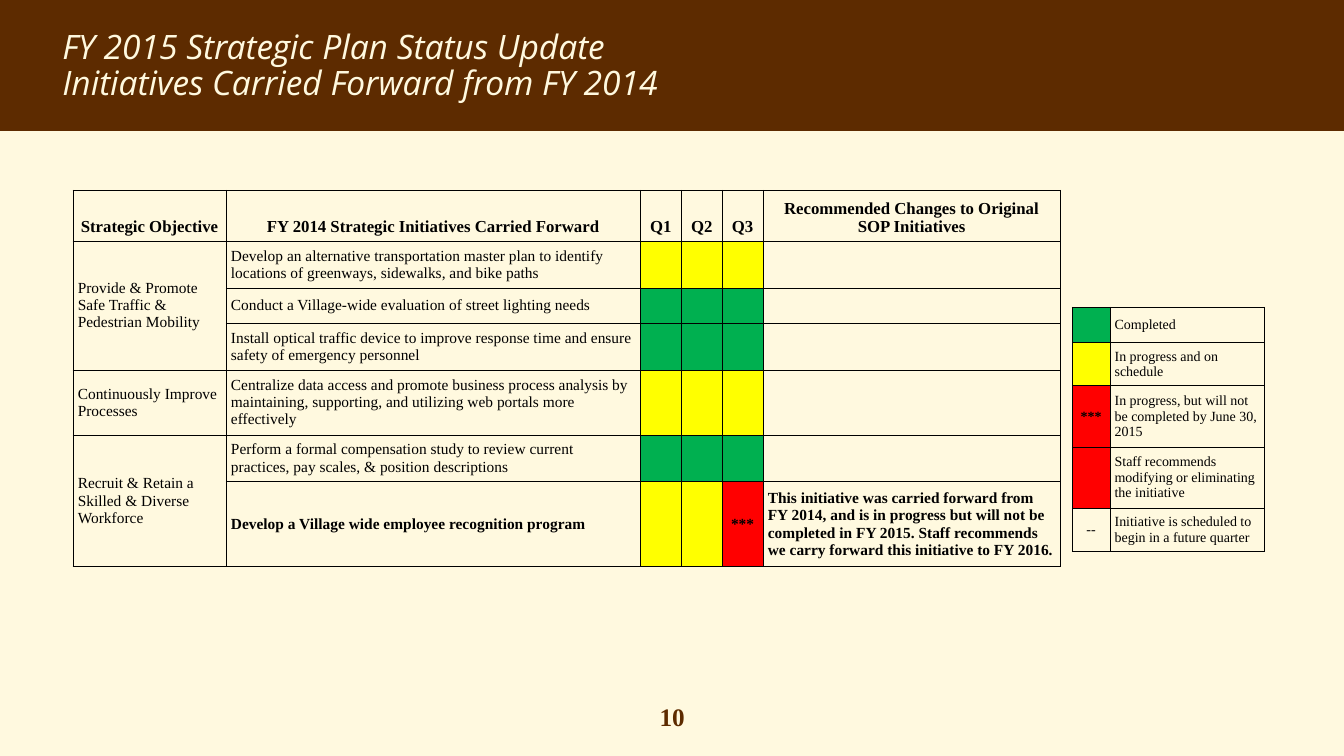
import dataclasses

import lxml.etree
import pptx
import pptx.dml.color
import pptx.enum.shapes
import pptx.enum.text
import pptx.oxml.ns
import pptx.util

Cm = pptx.util.Cm
Pt = pptx.util.Pt
Align = pptx.enum.text.PP_ALIGN
Anchor = pptx.enum.text.MSO_ANCHOR


@dataclasses.dataclass(frozen=True)
class Theme:
    cream: str = "FFF9DF"
    brown: str = "5D2B00"
    black: str = "000000"
    green: str = "00B050"
    yellow: str = "FFFF00"
    red: str = "FF0000"
    title_font: str = "Open Sans"
    body_font: str = "Times New Roman"
    title_size: int = 24
    number_size: int = 18
    header_size: int = 12
    body_size: int = 11
    legend_size: int = 10


THEME = Theme()


def rgb(color):
    return pptx.dml.color.RGBColor.from_string(color)


def write(para, text, size=THEME.body_size, font=THEME.body_font, color=THEME.black,
          bold=False, italic=False, align=Align.LEFT, spacing=None):
    para.alignment = align
    if spacing:
        para.line_spacing = spacing
    span = para.add_run()
    span.text = text
    span.font.size = Pt(size)
    span.font.name = font
    span.font.color.rgb = rgb(color)
    span.font.bold = bold
    span.font.italic = italic


def add_element(parent, tag, **attributes):
    return lxml.etree.SubElement(parent, pptx.oxml.ns.qn(tag), **attributes)


class Page:
    def __init__(self, deck, theme):
        self.theme = theme
        self.slide = deck.slides.add_slide(deck.slide_layouts[6])
        background = self.slide.background.fill
        background.solid()
        background.fore_color.rgb = rgb(theme.cream)

    def band(self, left, top, width, height):
        box = self.slide.shapes.add_shape(
            pptx.enum.shapes.MSO_SHAPE.RECTANGLE, left, top, width, height)
        box.shadow.inherit = False
        box.fill.solid()
        box.fill.fore_color.rgb = rgb(self.theme.brown)
        box.line.fill.background()

    def text(self, left, top, width, height, lines, **style):
        box = self.slide.shapes.add_textbox(left, top, width, height)
        frame = box.text_frame
        frame.word_wrap = True
        for index, line in enumerate(lines):
            para = frame.add_paragraph() if index else frame.paragraphs[0]
            write(para, line, **style)

    def table(self, left, top, widths, heights):
        frame = self.slide.shapes.add_table(
            len(heights), len(widths), left, top, Cm(sum(widths)), Cm(sum(heights)))
        grid = frame.table
        grid.first_row = False
        grid.horz_banding = False
        for column, width in zip(grid.columns, widths):
            column.width = Cm(width)
        for row, height in zip(grid.rows, heights):
            row.height = Cm(height)
        for cell in grid.iter_cells():
            self.frame_cell(cell)
        return grid

    def frame_cell(self, cell):
        cell.margin_left = cell.margin_right = Cm(0.12)
        cell.margin_top = cell.margin_bottom = Cm(0.12)
        cell.vertical_anchor = Anchor.MIDDLE
        properties = cell._tc.get_or_add_tcPr()
        for side in ("a:lnL", "a:lnR", "a:lnT", "a:lnB"):
            line = add_element(properties, side, w=str(Pt(0.5)))
            fill = add_element(line, "a:solidFill")
            add_element(fill, "a:srgbClr", val=self.theme.black)
        cell.fill.background()

    def cell(self, cell, text="", fill=None, anchor=Anchor.MIDDLE, **style):
        cell.vertical_anchor = anchor
        if fill:
            cell.fill.solid()
            cell.fill.fore_color.rgb = rgb(fill)
        para = cell.text_frame.paragraphs[0]
        if text:
            write(para, text, **style)
        else:
            add_element(para._p, "a:endParaRPr", sz=str(self.theme.legend_size * 100))


STATUS = {"G": THEME.green, "Y": THEME.yellow, "R": THEME.red}
HEADERS = ["Strategic Objective", "FY 2014 Strategic Initiatives Carried Forward",
           "Q1", "Q2", "Q3", "Recommended Changes to Original SOP Initiatives"]
OBJECTIVES = [
    (1, 3, "Provide & Promote Safe Traffic & Pedestrian Mobility"),
    (4, 4, "Continuously Improve Processes"),
    (5, 6, "Recruit & Retain a Skilled & Diverse Workforce"),
]
INITIATIVES = [
    ("Develop an alternative transportation master plan to identify locations of "
     "greenways, sidewalks, and bike paths", "YYY", ""),
    ("Conduct a Village-wide evaluation of street lighting needs", "GGG", ""),
    ("Install optical traffic device to improve response time and ensure safety of "
     "emergency personnel", "GGG", ""),
    ("Centralize data access and promote business process analysis by maintaining, "
     "supporting, and utilizing web portals more effectively", "YYY", ""),
    ("Perform a formal compensation study to review current practices, pay scales, "
     "& position descriptions", "GGG", ""),
    ("Develop a Village wide employee recognition program", "YYR",
     "This initiative was carried forward from FY 2014, and is in progress but will "
     "not be completed in FY 2015. Staff recommends we carry forward this initiative "
     "to FY 2016."),
]
LEGEND = [
    ("", THEME.green, "Completed"),
    ("", THEME.yellow, "In progress and on schedule"),
    ("***", THEME.red, "In progress, but will not be completed by June 30, 2015"),
    ("", THEME.red, "Staff recommends modifying or eliminating the initiative"),
    ("--", None, "Initiative is scheduled to begin in a future quarter"),
]


def add_status_table(page):
    grid = page.table(Cm(1.84), Cm(4.79), [3.86, 10.44, 1.03, 1.03, 1.03, 7.49],
                      [1.29, 1.18, 0.88, 1.18, 1.64, 1.18, 2.14])
    for column, header in enumerate(HEADERS):
        page.cell(grid.cell(0, column), header, anchor=Anchor.BOTTOM,
                  size=THEME.header_size, bold=True, align=Align.CENTER)
    for first, last, objective in OBJECTIVES:
        if last > first:
            grid.cell(first, 0).merge(grid.cell(last, 0))
        page.cell(grid.cell(first, 0), objective)
    for row, (initiative, quarters, change) in enumerate(INITIATIVES, 1):
        page.cell(grid.cell(row, 1), initiative, bold=bool(change))
        for column, status in enumerate(quarters, 2):
            page.cell(grid.cell(row, column), "***" if status == "R" else "",
                      fill=STATUS[status], bold=True, align=Align.CENTER)
        page.cell(grid.cell(row, 5), change, bold=True)


def add_legend(page):
    grid = page.table(Cm(27.02), Cm(7.74), [0.95, 3.9], [0.89, 1.09, 1.54, 1.54, 1.08])
    for row, (mark, color, meaning) in enumerate(LEGEND):
        page.cell(grid.cell(row, 0), mark, fill=color, size=THEME.legend_size,
                  bold=mark == "***", align=Align.CENTER)
        page.cell(grid.cell(row, 1), meaning, size=THEME.legend_size)


def main():
    deck = pptx.Presentation()
    deck.slide_width = Cm(33.87)
    deck.slide_height = Cm(19.05)
    page = Page(deck, THEME)
    page.band(0, 0, deck.slide_width, Cm(3.3))
    page.text(Cm(15.67), Cm(17.55), Cm(2.54), Cm(1.02), ["10"], size=THEME.number_size,
              color=THEME.brown, bold=True, align=Align.CENTER)
    page.text(Cm(1.32), Cm(0.64), Cm(31.22), Cm(2.31),
              ["FY 2015 Strategic Plan Status Update",
               "Initiatives Carried Forward from FY 2014"],
              size=THEME.title_size, font=THEME.title_font, color=THEME.cream,
              italic=True, spacing=0.9)
    add_status_table(page)
    add_legend(page)
    deck.save("out.pptx")


if __name__ == "__main__":
    main()
